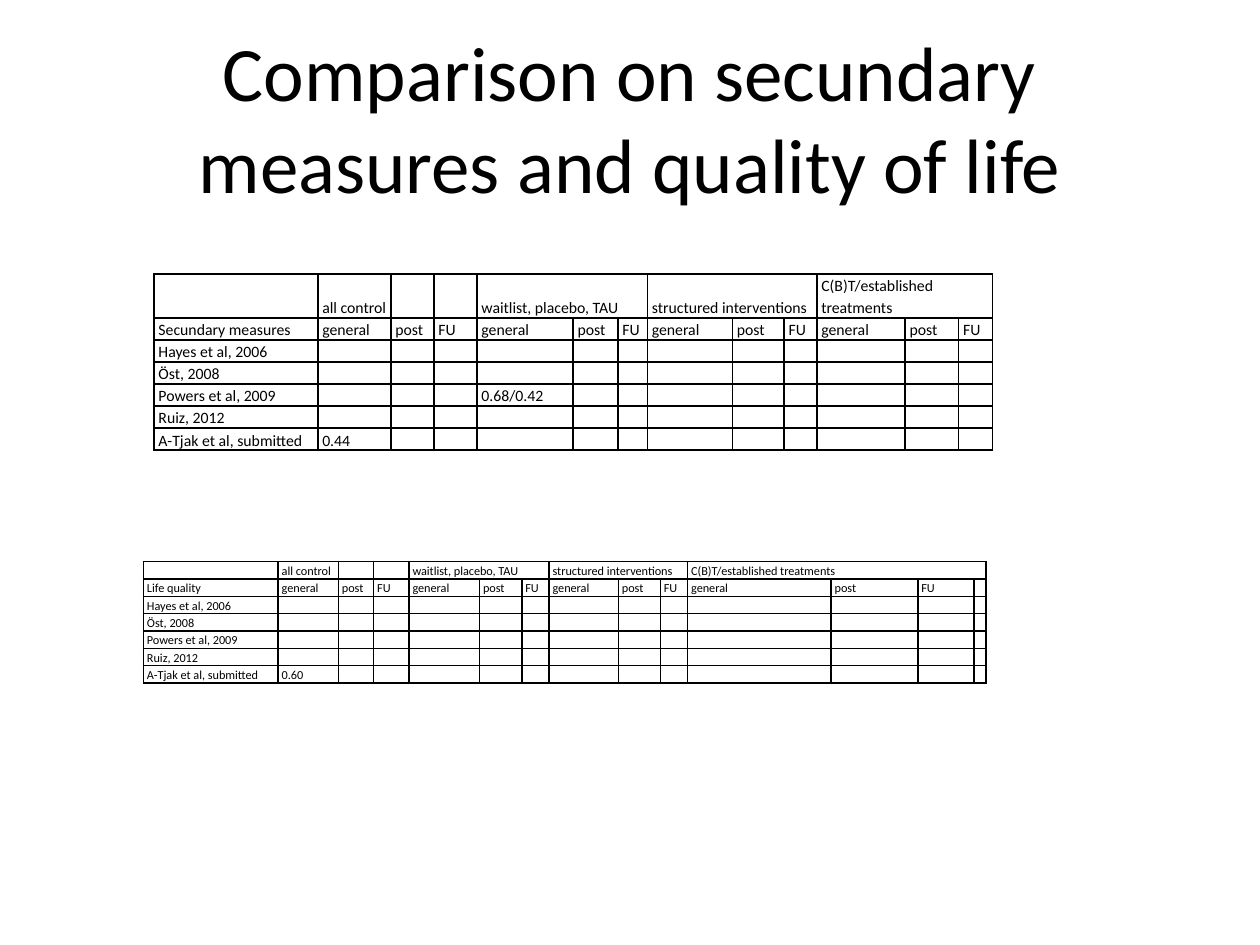
"""Build a slide comparing effect sizes on secondary measures and quality of life."""
from dataclasses import dataclass

from lxml.etree import SubElement
from pptx import Presentation
from pptx.dml.color import RGBColor as RGB
from pptx.enum.text import MSO_ANCHOR as Anchor, PP_ALIGN as Align
from pptx.oxml.ns import qn
from pptx.util import Pt


@dataclass(frozen=True)
class Theme:
    font: str = "Calibri"
    ink: str = "000000"
    title: float = 44
    large: float = 9
    small: float = 7
    border: float = 1
    spacing: float = 1.15


@dataclass(frozen=True)
class EffectTable:
    label: str
    left: float
    top: float
    widths: tuple[float, ...]
    heights: tuple[float, ...]
    size: float
    inset: float
    values: dict[tuple[int, int], str]


THEME = Theme()
GROUPS = {4: "waitlist, placebo, TAU", 7: "structured interventions",
          10: "C(B)T/established treatments"}
PHASES = ("general", "post", "FU")
STUDIES = ("Hayes et al, 2006", "Öst, 2008", "Powers et al, 2009",
           "Ruiz, 2012", "A-Tjak et al, submitted")
TABLES = (
    EffectTable("Secundary measures", 88, 156.6,
                (93.6, 41.8, 24.6, 24.6, 55, 25.6, 16.8, 48.6, 29.6, 18.7,
                 50.4, 30.6, 19.4),
                (25,) + (12.6,) * 6, THEME.large, 2.6,
                {(4, 4): "0.68/0.42", (6, 1): "0.44"}),
    EffectTable("Life quality", 82, 321,
                (77, 34.4, 20.2, 20.2, 40.3, 24.2, 15.6, 39.6, 24, 15.6,
                 82, 49.6, 32, 6.6),
                (9.9,) * 7, THEME.small, 2, {(6, 1): "0.60"}),
)


def cell_texts(spec_table: EffectTable) -> dict[tuple[int, int], str]:
    texts = {(0, 1): "all control", (1, 0): spec_table.label}
    texts |= {(0, col): name for col, name in GROUPS.items()}
    texts |= {(1, col): PHASES[(col - 1) % 3] for col in range(1, 13)}
    texts |= {(row, 0): study for row, study in enumerate(STUDIES, 2)}
    return texts | spec_table.values


def style_font(font, size: float) -> None:
    font.name, font.size, font.bold = THEME.font, Pt(size), False
    font.color.rgb = RGB.from_string(THEME.ink)


def add_borders(cell) -> None:
    props = cell._tc.get_or_add_tcPr()
    for side in ("lnL", "lnR", "lnT", "lnB"):
        line = SubElement(props, qn(f"a:{side}"), w=str(Pt(THEME.border)))
        fill = SubElement(line, qn("a:solidFill"))
        SubElement(fill, qn("a:srgbClr"), val=THEME.ink)


def fill_cell(cell, text: str, size: float, inset: float) -> None:
    add_borders(cell)
    cell.fill.background()
    cell.vertical_anchor = Anchor.BOTTOM
    cell.margin_left = cell.margin_right = Pt(inset)
    cell.margin_top = cell.margin_bottom = Pt(0)
    p = cell.text_frame.paragraphs[0]
    p.line_spacing = THEME.spacing
    style_font(p.font, size)
    if text:
        p.add_run().text = text
    else:
        SubElement(p._p, qn("a:endParaRPr"), sz=str(round(size * 100)))


def add_effect_table(s, data: EffectTable) -> None:
    rows, cols = len(data.heights), len(data.widths)
    table = s.shapes.add_table(rows, cols, Pt(data.left), Pt(data.top),
                               Pt(sum(data.widths)), Pt(sum(data.heights))).table
    table.first_row = table.horz_banding = False
    for column, width in zip(table.columns, data.widths):
        column.width = Pt(width)
    for row, height in zip(table.rows, data.heights):
        row.height = Pt(height)
    texts = cell_texts(data)
    for row in range(rows):
        for col in range(cols):
            fill_cell(table.cell(row, col), texts.get((row, col), ""),
                      data.size, data.inset)
    starts = list(GROUPS)
    for start, end in zip(starts, starts[1:] + [cols]):
        table.cell(0, start).merge(table.cell(0, end - 1))


def add_title(s, text: str) -> None:
    sp = s.shapes.title
    sp.left, sp.top, sp.width, sp.height = Pt(36), Pt(21.6), Pt(648), Pt(90)
    tf = sp.text_frame
    tf.text = text
    tf.word_wrap = True
    tf.vertical_anchor = Anchor.MIDDLE
    p = tf.paragraphs[0]
    p.alignment = Align.CENTER
    style_font(p.font, THEME.title)


def main() -> None:
    prs = Presentation()
    prs.slide_width, prs.slide_height = Pt(720), Pt(540)
    s = prs.slides.add_slide(prs.slide_layouts[5])
    add_title(s, "Comparison on secundary measures and quality of life")
    for data in TABLES:
        add_effect_table(s, data)
    prs.save("out.pptx")


if __name__ == "__main__":
    main()
